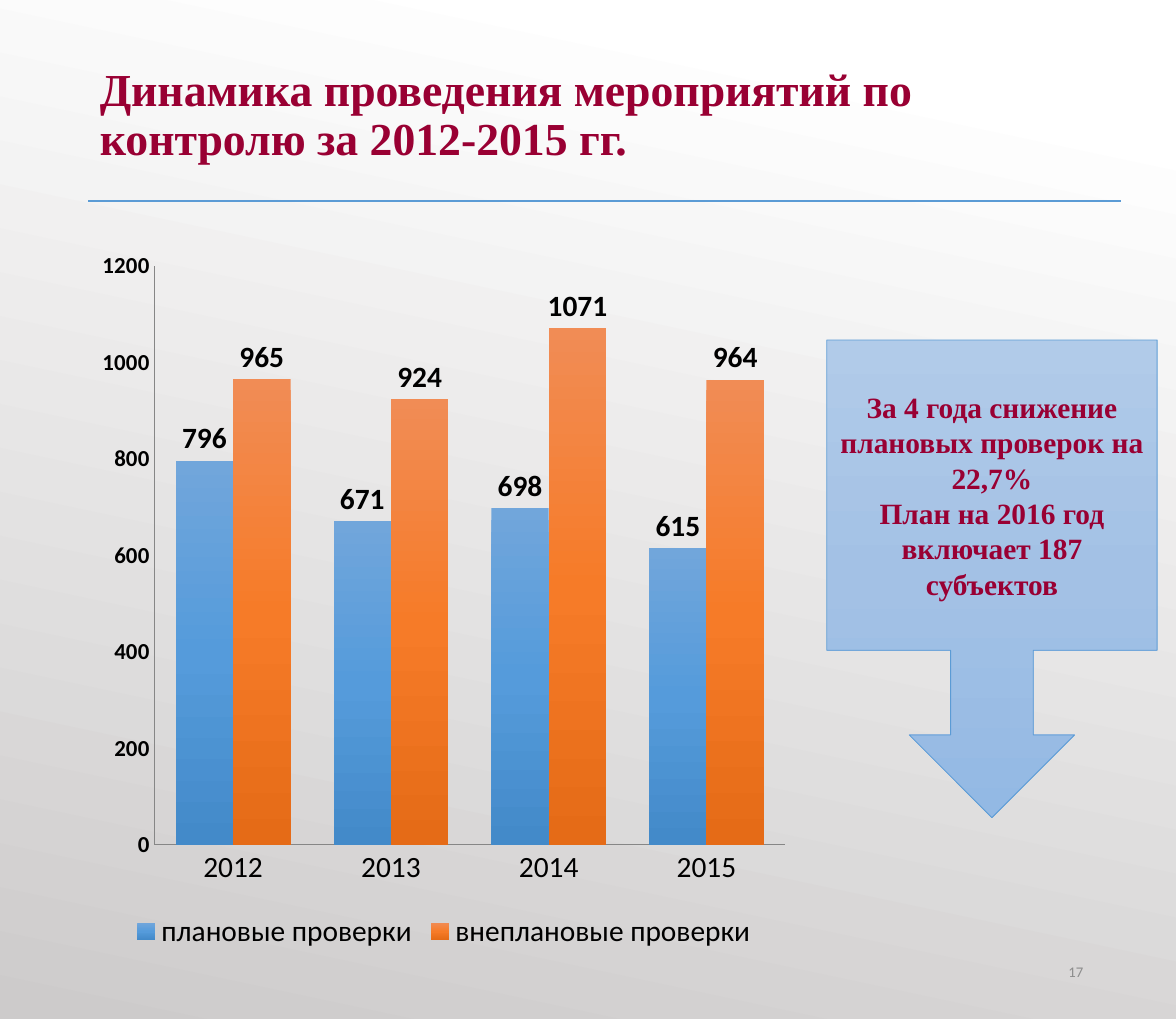
"""Build a slide on planned and unplanned inspections in 2012-2015."""
from copy import deepcopy
from dataclasses import dataclass

from lxml.etree import SubElement
from pptx import Presentation
from pptx.chart.data import CategoryChartData
from pptx.dml.color import RGBColor
from pptx.dml.fill import FillFormat
from pptx.enum.chart import XL_CHART_TYPE, XL_LABEL_POSITION, XL_LEGEND_POSITION, XL_TICK_MARK
from pptx.enum.shapes import MSO_CONNECTOR, MSO_SHAPE
from pptx.enum.text import MSO_ANCHOR, PP_ALIGN
from pptx.oxml.ns import qn
from pptx.slide import Slide
from pptx.text.text import Font, TextFrame
from pptx.util import Inches, Pt

HUES = {
    "wine": "990033", "blue": "5B9BD5", "black": "000000", "gray": "8C8C8C", "axis": "868686",
    "white": "FFFFFF", "ash": "CDCBCB",
    "pale": "B1CBE9", "mid": "A3C1E5", "deep": "93B9E4",
    "sky": "71A6DB", "azure": "559BDB", "steel": "438AC9",
    "peach": "F18C55", "orange": "F67B28", "rust": "E56B17",
}


@dataclass
class Style:
    """Hold the look of a text."""
    face: str
    size: float
    hue: str
    bold: bool = False
    align: PP_ALIGN = PP_ALIGN.LEFT
    lead: float = 1.0


@dataclass
class Series:
    """Hold one row of bars and its gradient."""
    name: str
    vals: tuple[int, ...]
    stops: dict[int, str]


YEARS = ("2012", "2013", "2014", "2015")
ROWS = (
    Series("плановые проверки", (796, 671, 698, 615), {0: "sky", 50: "azure", 100: "steel"}),
    Series("внеплановые проверки", (965, 924, 1071, 964), {0: "peach", 50: "orange", 100: "rust"}),
)
TITLE = Style("Times New Roman", 28, "wine", True, lead=0.9)
NOTE = Style("Times New Roman", 18, "wine", True, PP_ALIGN.CENTER)
PAGE = Style("Calibri", 9, "gray", align=PP_ALIGN.RIGHT)
BASE = Style("Calibri", 18, "black")
LABEL = Style("Calibri", 18, "black", True)
SCALE = Style("Calibri", 14, "black", True)


def tint(key: str) -> RGBColor:
    """Return a named colour."""
    return RGBColor.from_string(HUES[key])


def blend(fill: FillFormat, stops: dict[int, str], angle: float) -> None:
    """Set a linear gradient with the given stops and clockwise angle."""
    fill.gradient()
    fill.gradient_angle = (360 - angle) % 360
    first = fill.gradient_stops[0]._gs
    for _ in range(len(stops) - 2):
        first.addnext(deepcopy(first))
    for stop, (place, key) in zip(fill.gradient_stops, stops.items()):
        stop.color.rgb = tint(key)
        stop.position = place / 100


def dress(font: Font, style: Style) -> None:
    """Apply a style to a font."""
    font.name, font.size, font.bold = style.face, Pt(style.size), style.bold
    font.color.rgb = tint(style.hue)


def write(frame: TextFrame, lines: tuple[str, ...], style: Style) -> None:
    """Write paragraphs in one style, centred in height."""
    frame.word_wrap = True
    frame.vertical_anchor = MSO_ANCHOR.MIDDLE
    frame.text = "\n".join(lines)
    for para in frame.paragraphs:
        para.alignment, para.line_spacing = style.align, style.lead
        dress(para.font, style)


def add_text(slide: Slide, box: tuple[float, ...], text: str, style: Style) -> None:
    """Add a text box."""
    write(slide.shapes.add_textbox(*map(Inches, box)).text_frame, (text,), style)


def add_bars(slide: Slide, box: tuple[float, ...]) -> None:
    """Add the column chart."""
    data = CategoryChartData()
    data.categories = YEARS
    for row in ROWS:
        data.add_series(row.name, row.vals)
    chart = slide.shapes.add_chart(XL_CHART_TYPE.COLUMN_CLUSTERED, *map(Inches, box), data).chart
    dress(chart.font, BASE)
    chart.has_title = False
    chart.has_legend = True
    chart.legend.position = XL_LEGEND_POSITION.BOTTOM
    chart.legend.include_in_layout = False
    for axis in (chart.category_axis, chart.value_axis):
        axis.major_tick_mark = axis.minor_tick_mark = XL_TICK_MARK.NONE
        axis.has_major_gridlines = False
        axis.format.line.color.rgb = tint("axis")
        axis.format.line.width = Pt(0.75)
    scale = chart.value_axis
    scale.minimum_scale, scale.maximum_scale, scale.major_unit = 0, 1200, 200
    dress(scale.tick_labels.font, SCALE)
    plot = chart.plots[0]
    plot.gap_width, plot.overlap, plot.vary_by_categories = 75, 0, False
    for bars, row in zip(plot.series, ROWS):
        blend(bars.format.fill, row.stops, 90)
        labels = bars.data_labels
        labels.show_value = True
        labels.position = XL_LABEL_POSITION.OUTSIDE_END
        dress(labels.font, LABEL)


def add_note(slide: Slide, box: tuple[float, ...], lines: tuple[str, ...]) -> None:
    """Add the arrow callout."""
    shape = slide.shapes.add_shape(MSO_SHAPE.DOWN_ARROW_CALLOUT, *map(Inches, box))
    shape.shadow.inherit = False
    blend(shape.fill, {0: "pale", 50: "mid", 100: "deep"}, 90)
    shape.line.color.rgb = tint("blue")
    shape.line.width = Pt(0.5)
    write(shape.text_frame, lines, NOTE)


def add_rule(slide: Slide, ends: tuple[float, ...]) -> None:
    """Add the line under the title."""
    rule = slide.shapes.add_connector(MSO_CONNECTOR.STRAIGHT, *map(Inches, ends))
    rule.line.color.rgb = tint("blue")
    rule.line.width = Pt(1.5)
    SubElement(rule._element.spPr, qn("a:effectLst"))


def main() -> None:
    """Build and save the slide."""
    deck = Presentation()
    deck.slide_width, deck.slide_height = Inches(10), Inches(22 / 2.54)
    slide = deck.slides.add_slide(deck.slide_layouts[6])
    blend(slide.background.fill, {10: "white", 100: "ash"}, 102)
    add_text(slide, (0.75, 0.27, 8.72, 1.44),
             "Динамика проведения мероприятий по контролю за 2012-2015 гг.", TITLE)
    add_bars(slide, (0.75, 2.02, 6.05, 6.1))
    add_text(slide, (7.06, 8.03, 2.25, 0.46), "17", PAGE)
    add_note(slide, (7.03, 2.89, 2.81, 4.06),
             ("За 4 года снижение плановых проверок на 22,7%",
              "План на 2016 год включает 187 субъектов"))
    add_rule(slide, (0.75, 1.71, 9.53, 1.71))
    deck.save("out.pptx")


if __name__ == "__main__":
    main()
